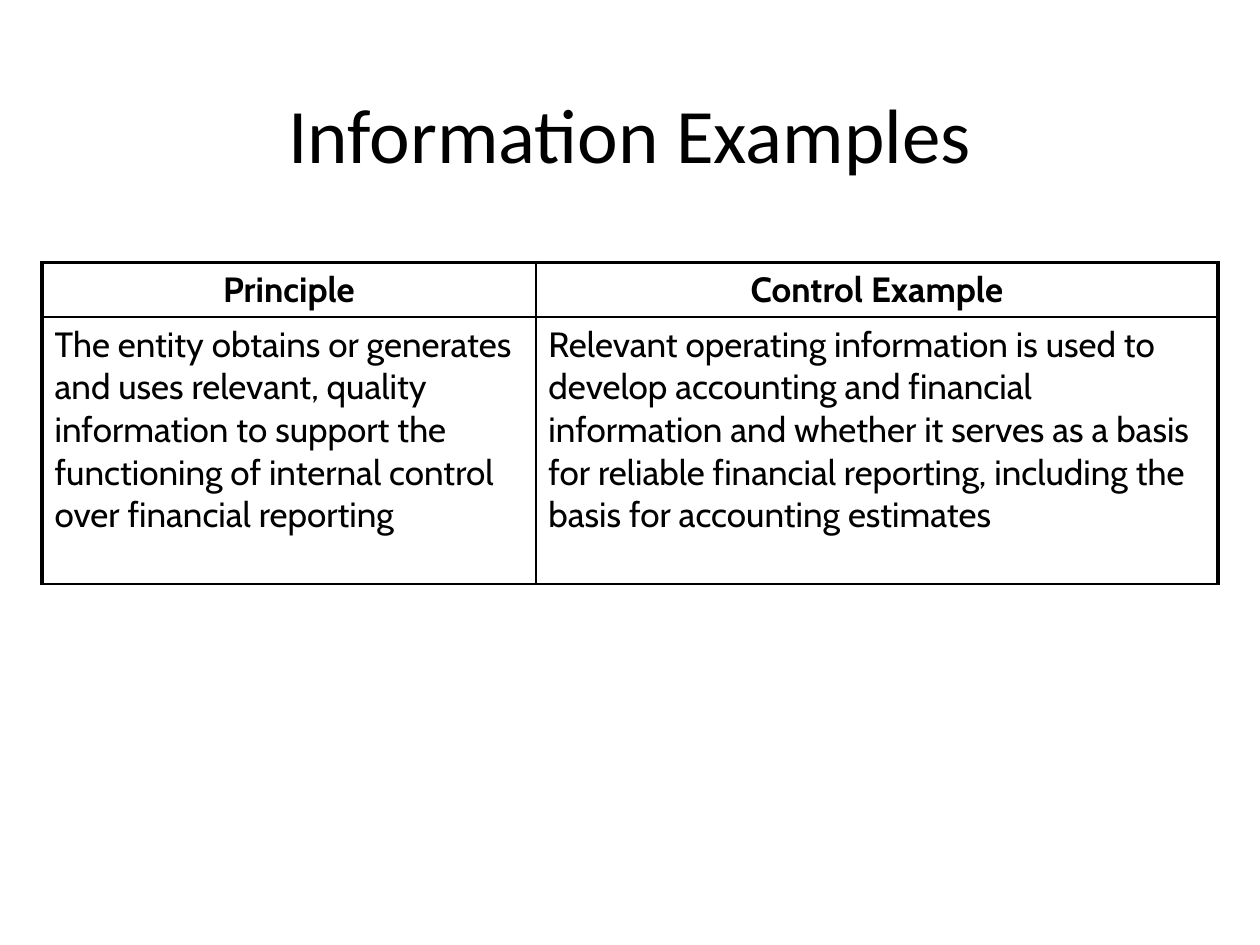
from lxml.etree import SubElement
from pptx import Presentation
from pptx.dml.color import RGBColor
from pptx.enum.text import MSO_ANCHOR, PP_ALIGN
from pptx.oxml.ns import qn
from pptx.util import Inches, Pt

BLACK = RGBColor(0, 0, 0)
WHITE = RGBColor(255, 255, 255)
WIDE, HIGH = Inches(10), Inches(7.5)
THICK, THIN = 2.25, 1
COLS = (0.42, 0.58)
ROWS = (0.17, 0.83)
CELLS = (
    ("Principle", "Control Example"),
    (
        "The entity obtains or generates and uses relevant, quality information "
        "to support the functioning of internal control over financial reporting",
        "Relevant operating information is used to develop accounting and financial "
        "information and whether it serves as a basis for reliable financial reporting, "
        "including the basis for accounting estimates",
    ),
)


def share(left, top, width, height):
    return int(left * WIDE), int(top * HIGH), int(width * WIDE), int(height * HIGH)


def write(frame, text, font="Cabin", size=20, bold=False, align=PP_ALIGN.LEFT):
    frame.word_wrap = True
    para = frame.paragraphs[0]
    para.alignment = align
    run = para.add_run()
    run.text = text
    run.font.name = font
    run.font.size = Pt(size)
    run.font.bold = bold
    run.font.color.rgb = BLACK


def edge(cell, side, width):
    line = SubElement(cell._tc.get_or_add_tcPr(), qn(f"a:ln{side}"), w=str(Pt(width)))
    fill = SubElement(line, qn("a:solidFill"))
    SubElement(fill, qn("a:srgbClr"), val=str(BLACK))


def title(slide, box):
    frame = slide.shapes.add_textbox(*box).text_frame
    frame.vertical_anchor = MSO_ANCHOR.MIDDLE
    write(frame, "Information Examples", font="Calibri", size=44, align=PP_ALIGN.CENTER)


def grid(slide, box):
    table = slide.shapes.add_table(len(ROWS), len(COLS), *box).table
    table.first_row = table.horz_banding = False
    for col, part in zip(table.columns, COLS):
        col.width = int(box[2] * part)
    for row, part in zip(table.rows, ROWS):
        row.height = int(box[3] * part)
    for r, texts in enumerate(CELLS):
        for c, text in enumerate(texts):
            cell = table.cell(r, c)
            head = r == 0
            write(cell.text_frame, text, bold=head,
                  align=PP_ALIGN.CENTER if head else PP_ALIGN.LEFT)
            edge(cell, "L", THICK if c == 0 else THIN)
            edge(cell, "R", THICK if c == len(COLS) - 1 else THIN)
            edge(cell, "T", THICK if head else THIN)
            edge(cell, "B", THIN)
            cell.fill.solid()
            cell.fill.fore_color.rgb = WHITE


def main():
    deck = Presentation()
    deck.slide_width, deck.slide_height = WIDE, HIGH
    slide = deck.slides.add_slide(deck.slide_layouts[6])
    title(slide, share(0.05, 0.04, 0.9, 0.2))
    grid(slide, share(1 / 30, 5 / 18, 28 / 30, 0.34))
    deck.save("out.pptx")


if __name__ == "__main__":
    main()
